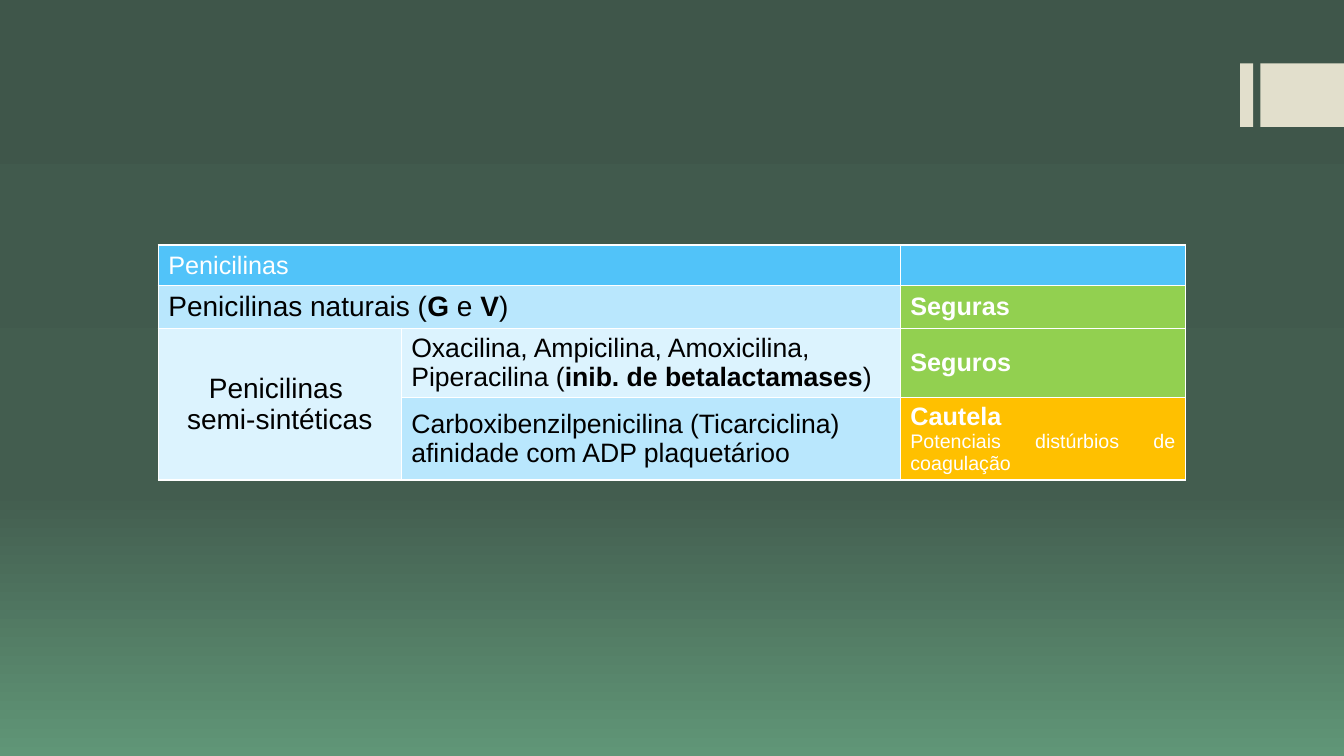
from copy import deepcopy
from dataclasses import dataclass

from lxml.etree import SubElement
from pptx import Presentation
from pptx.dml.color import RGBColor
from pptx.enum.shapes import MSO_SHAPE
from pptx.enum.text import MSO_ANCHOR, PP_ALIGN
from pptx.oxml.ns import qn
from pptx.util import Inches, Pt


@dataclass(frozen=True)
class Theme:
    """Colours, font and type sizes of the slide."""
    font: str = "Arial"
    white: str = "FFFFFF"
    black: str = "000000"
    accent: str = "E2DFCC"
    header: str = "51C3F9"
    band_dark: str = "B9E7FD"
    band_light: str = "DCF3FE"
    safe: str = "92D050"
    caution: str = "FFC000"
    backdrop: tuple = ((0, "3F564A"), (0.65, "435D4F"), (1, "609677"))
    group: int = 20
    drug: int = 19
    label: int = 18
    note: int = 14
    border: int = 1


THEME = Theme()


def paint_backdrop(slide):
    """Fill the background with the vertical green gradient."""
    fill = slide.background.fill
    fill.gradient()
    fill.gradient_angle = 270
    stop_list = next(slide.element.iter(qn("a:gsLst")))
    stop_list.append(deepcopy(stop_list[0]))
    for stop, (position, colour) in zip(fill.gradient_stops, THEME.backdrop):
        stop.position = position
        stop.color.rgb = RGBColor.from_string(colour)


def add_edge_tab(slide, left, top, width, height):
    """Draw the narrow bar and the wide block at the right edge."""
    bar_width, gap = 0.13, 0.07
    block_offset = bar_width + gap
    for offset, part_width in ((0, bar_width), (block_offset, width - block_offset)):
        part = slide.shapes.add_shape(
            MSO_SHAPE.RECTANGLE, Inches(left + offset), Inches(top),
            Inches(part_width), Inches(height))
        part.shadow.inherit = False
        part.fill.solid()
        part.fill.fore_color.rgb = RGBColor.from_string(THEME.accent)
        part.line.fill.background()


def style_cell(cell, colour):
    """Give a cell its borders, fill and vertical centring."""
    properties = cell._tc.get_or_add_tcPr()
    for side in ("a:lnL", "a:lnR", "a:lnT", "a:lnB"):
        line = SubElement(properties, qn(side), w=str(Pt(THEME.border)))
        SubElement(SubElement(line, qn("a:solidFill")), qn("a:srgbClr"), val=THEME.white)
    cell.fill.solid()
    cell.fill.fore_color.rgb = RGBColor.from_string(colour)
    cell.vertical_anchor = MSO_ANCHOR.MIDDLE


def write_line(cell, text, size, colour, bold=False, align=PP_ALIGN.LEFT, first=True):
    """Write one paragraph; parts between asterisks turn bold."""
    frame = cell.text_frame
    paragraph = frame.paragraphs[0] if first else frame.add_paragraph()
    paragraph.alignment = align
    font = paragraph.font
    font.name, font.size, font.bold = THEME.font, Pt(size), bold
    font.color.rgb = RGBColor.from_string(colour)
    for index, part in enumerate(text.split("*")):
        run = paragraph.add_run()
        run.text = part
        if index % 2:
            run.font.bold = True


def add_penicillin_table(slide, left, top, width, height):
    """Build the table of penicillins and their safety."""
    column_shares = (2.41, 4.95, 2.83)
    row_shares = (0.38, 0.42, 0.69, 0.81)
    table = slide.shapes.add_table(
        len(row_shares), len(column_shares), Inches(left), Inches(top),
        Inches(width), Inches(height)).table
    table.first_row = table.horz_banding = False
    for column, share in zip(table.columns, column_shares):
        column.width = Inches(width * share / sum(column_shares))
    for row, share in zip(table.rows, row_shares):
        row.height = Inches(height * share / sum(row_shares))

    fills = (
        (THEME.header, THEME.header, THEME.header),
        (THEME.band_dark, THEME.band_dark, THEME.safe),
        (THEME.band_light, THEME.band_light, THEME.safe),
        (THEME.band_light, THEME.band_dark, THEME.caution),
    )
    for row, colours in zip(table.rows, fills):
        for cell, colour in zip(row.cells, colours):
            style_cell(cell, colour)
    for start, end in (((0, 0), (0, 1)), ((1, 0), (1, 1)), ((2, 0), (3, 0))):
        table.cell(*start).merge(table.cell(*end))

    write_line(table.cell(0, 0), "Penicilinas", THEME.label, THEME.white)
    write_line(table.cell(1, 0), "Penicilinas naturais (*G* e *V*)", THEME.group, THEME.black)
    semisynthetic = table.cell(2, 0)
    write_line(semisynthetic, "Penicilinas ", THEME.group, THEME.black,
               align=PP_ALIGN.CENTER)
    write_line(semisynthetic, "semi-sintéticas", THEME.group, THEME.black,
               align=PP_ALIGN.CENTER, first=False)
    drugs = (
        "Oxacilina, Ampicilina, Amoxicilina, Piperacilina (*inib. de betalactamases*)",
        "Carboxibenzilpenicilina (Ticarciclina) afinidade com ADP plaquetárioo",
    )
    for row, drug in enumerate(drugs, start=2):
        write_line(table.cell(row, 1), drug, THEME.drug, THEME.black)
    for row, verdict in enumerate(("Seguras", "Seguros", "Cautela"), start=1):
        write_line(table.cell(row, 2), verdict, THEME.label, THEME.white, bold=True)
    write_line(table.cell(3, 2), "Potenciais distúrbios de coagulação", THEME.note,
               THEME.white, align=PP_ALIGN.JUSTIFY, first=False)


def main():
    """Assemble the slide and save it."""
    presentation = Presentation()
    presentation.slide_width = Inches(13.33)
    presentation.slide_height = Inches(7.5)
    slide = presentation.slides.add_slide(presentation.slide_layouts[6])
    paint_backdrop(slide)
    add_edge_tab(slide, 12.3, 0.63, 1.03, 0.63)
    add_penicillin_table(slide, 1.57, 2.43, 10.19, 2.3)
    presentation.save("out.pptx")


if __name__ == "__main__":
    main()
